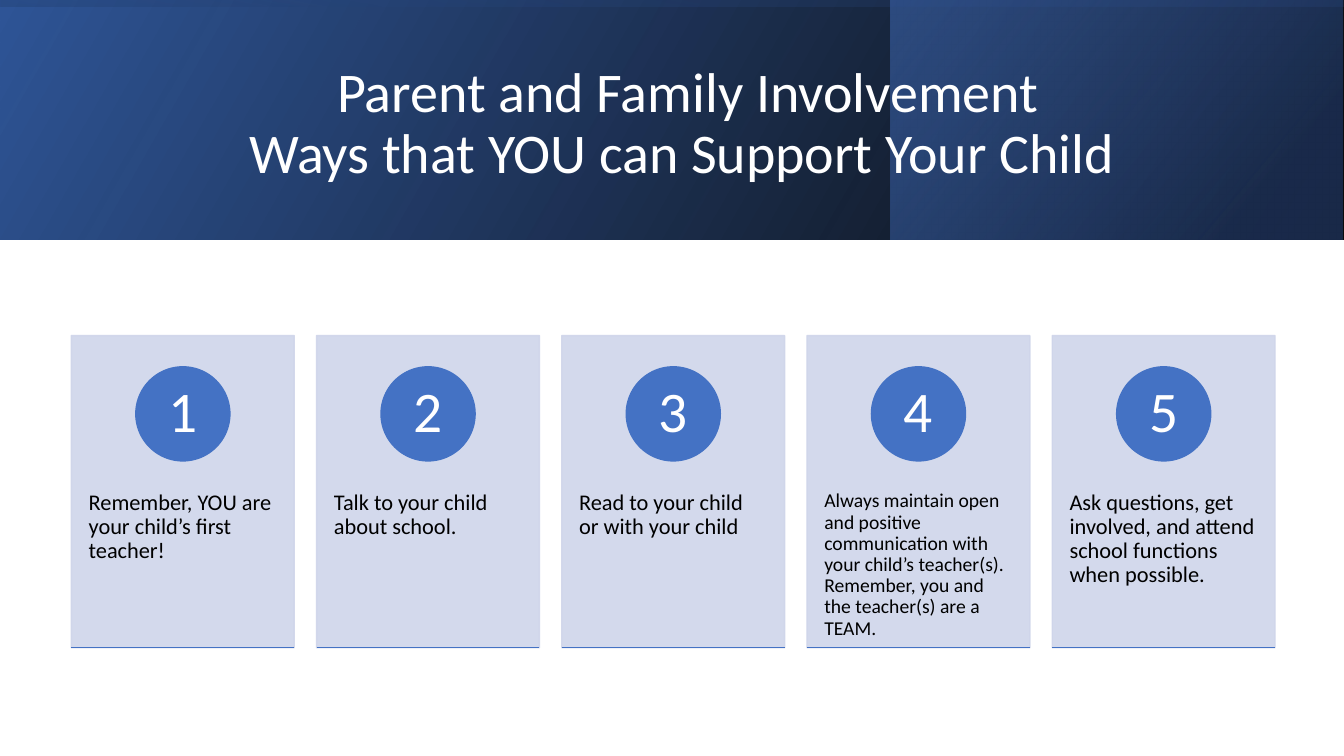
from dataclasses import dataclass
from lxml.etree import SubElement
from pptx import Presentation
from pptx.dml.color import RGBColor as Rgb
from pptx.enum.shapes import MSO_CONNECTOR as Connector, MSO_SHAPE as Shape
from pptx.enum.text import MSO_ANCHOR as Anchor, MSO_AUTO_SIZE as AutoSize, PP_ALIGN as Align
from pptx.oxml.ns import qn
from pptx.util import Pt


@dataclass(frozen=True)
class Theme:
    font: str = "Calibri"
    white: Rgb = Rgb.from_string("FFFFFF")
    black: Rgb = Rgb.from_string("000000")
    blue: Rgb = Rgb.from_string("4472C4")
    deep_blue: Rgb = Rgb.from_string("2F5597")
    navy: Rgb = Rgb.from_string("203864")
    card: Rgb = Rgb.from_string("CFD5EA")
    title_size: int = 40
    number_size: int = 41
    body_size: int = 16
    small_size: int = 14


theme = Theme()


def set_alpha(fill_element, percent):
    SubElement(fill_element[0], qn("a:alpha"), val=str(percent * 1000))


def write(frame, lines, size, color, align, anchor, inset_x, inset_y):
    frame.word_wrap = True
    frame.auto_size = AutoSize.NONE
    frame.vertical_anchor = anchor
    frame.margin_left = frame.margin_right = Pt(inset_x)
    frame.margin_top = frame.margin_bottom = Pt(inset_y)
    para = frame.paragraphs[0]
    para.alignment = align
    para.line_spacing = 0.9
    for index, line in enumerate(lines):
        if index:
            para.add_line_break()
        span = para.add_run()
        span.text = line
        span.font.name = theme.font
        span.font.size = Pt(size)
        span.font.color.rgb = color


deck = Presentation()
deck.slide_width, deck.slide_height = Pt(960), Pt(540)
page = deck.slides.add_slide(deck.slide_layouts[5])
shapes = page.shapes

band_height = 170.8
bands = [
    (0, 0, 960, band_height, 0, 30, [(0, theme.black, 96), (1, theme.deep_blue, 100)]),
    (636.2, 0, 323, band_height, 0, 40, [(0.19, theme.navy, 68), (1, theme.blue, 48)]),
    (394.6, -394.6, band_height, 960, 270, 10, [(0.23, theme.deep_blue, 16), (0.99, theme.black, 45)]),
]
for left, top, width, height, rotation, angle, stops in bands:
    band = shapes.add_shape(Shape.RECTANGLE, Pt(left), Pt(top), Pt(width), Pt(height))
    band.shadow.inherit = False
    band.line.fill.background()
    band.rotation = rotation
    band._element.spPr.xfrm.set("flipH", "1")
    band.fill.gradient()
    band.fill.gradient_angle = angle
    for stop, (position, color, alpha) in zip(band.fill.gradient_stops, stops):
        stop.position = position
        stop.color.rgb = color
    gradient_list = band._element.spPr.find(qn("a:gradFill")).find(qn("a:gsLst"))
    for element, (position, color, alpha) in zip(gradient_list, stops):
        set_alpha(element, alpha)

title = shapes.title
shapes._spTree.append(title._element)
title.left, title.top, title.width, title.height = Pt(108.7), Pt(27.4), Pt(765.4), Pt(123.8)
heading = ["Parent and Family Involvement", "Ways that YOU can Support Your Child "]
write(title.text_frame, heading, theme.title_size, theme.white, Align.CENTER, Anchor.MIDDLE, 7.2, 3.6)

tips = [
    ("Remember, YOU are your child’s first teacher!", theme.body_size),
    ("Talk to your child about school.", theme.body_size),
    ("Read to your child or with your child", theme.body_size),
    ("Always maintain open and positive communication with your child’s teacher(s). "
     "Remember, you and the teacher(s) are a TEAM.", theme.small_size),
    ("Ask questions, get involved, and attend school functions when possible.", theme.body_size),
]
first_left, pitch, card_top, card_width, card_height = 51, 175.15, 239.7, 159.2, 223
circle_size = 67.2
card_bottom = card_top + card_height

for index, (tip, size) in enumerate(tips):
    left = first_left + index * pitch

    card = shapes.add_shape(Shape.RECTANGLE, Pt(left), Pt(card_top), Pt(card_width), Pt(card_height))
    card.shadow.inherit = False
    card.fill.solid()
    card.fill.fore_color.rgb = theme.card
    card.line.color.rgb = theme.card
    card.line.width = Pt(1)
    properties = card._element.spPr
    for parent in (properties, properties.find(qn("a:ln"))):
        set_alpha(parent.find(qn("a:solidFill")), 90)

    box = shapes.add_textbox(Pt(left), Pt(324.7), Pt(card_width), Pt(134))
    write(box.text_frame, [tip], size, theme.black, Align.LEFT, Anchor.TOP, 12.4, 26)

    circle_left = left + (card_width - circle_size) / 2
    circle = shapes.add_shape(Shape.OVAL, Pt(circle_left), Pt(262), Pt(circle_size), Pt(circle_size))
    circle.shadow.inherit = False
    circle.fill.solid()
    circle.fill.fore_color.rgb = theme.blue
    circle.line.color.rgb = theme.blue
    circle.line.width = Pt(1)
    write(circle.text_frame, [str(index + 1)], theme.number_size, theme.white,
          Align.CENTER, Anchor.MIDDLE, 5, 1)

    rule = shapes.add_connector(Connector.STRAIGHT, Pt(left), Pt(card_bottom),
                                Pt(left + card_width), Pt(card_bottom))
    rule.line.color.rgb = theme.blue
    rule.line.width = Pt(1)
    SubElement(rule._element.spPr, qn("a:effectLst"))

deck.save("out.pptx")
